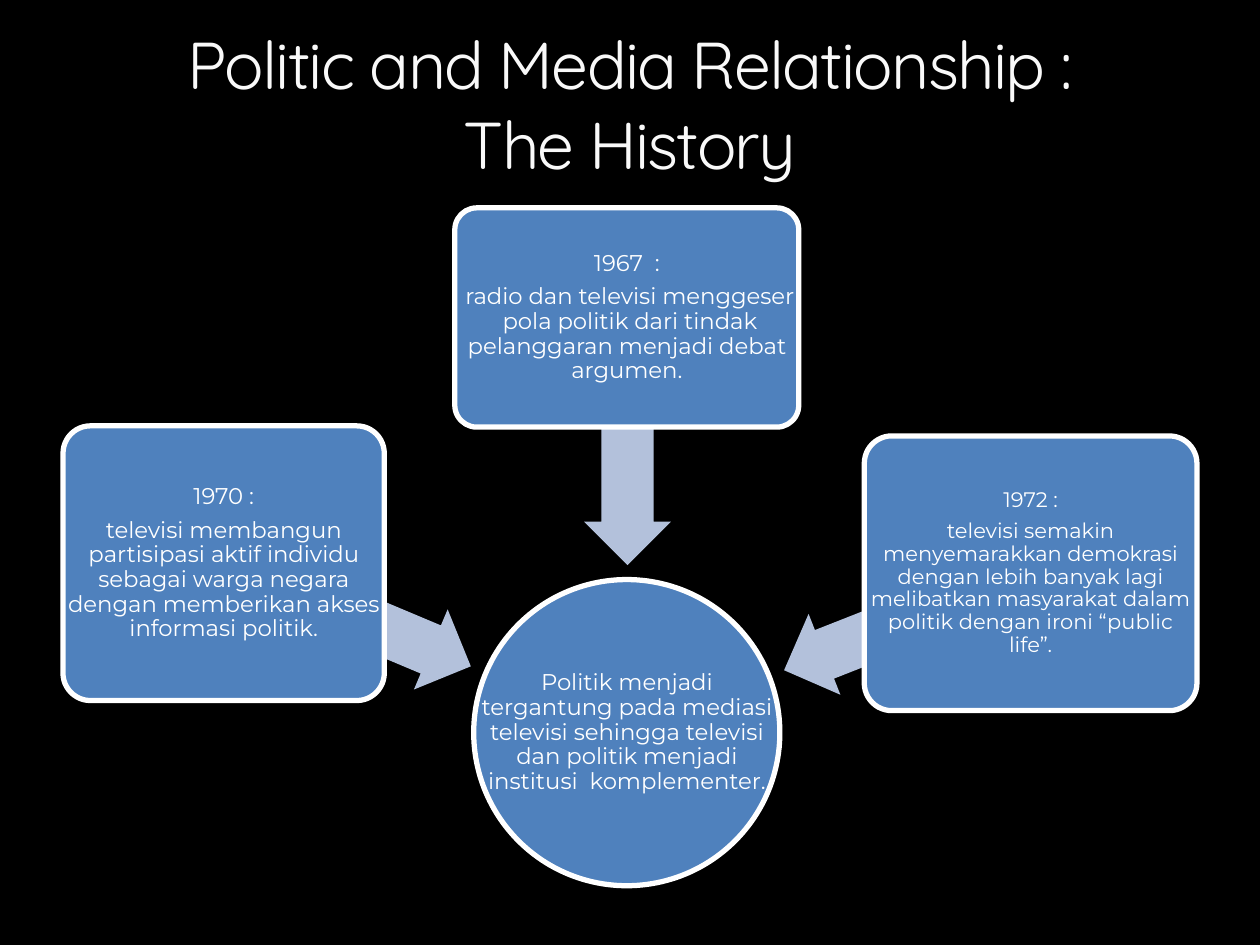
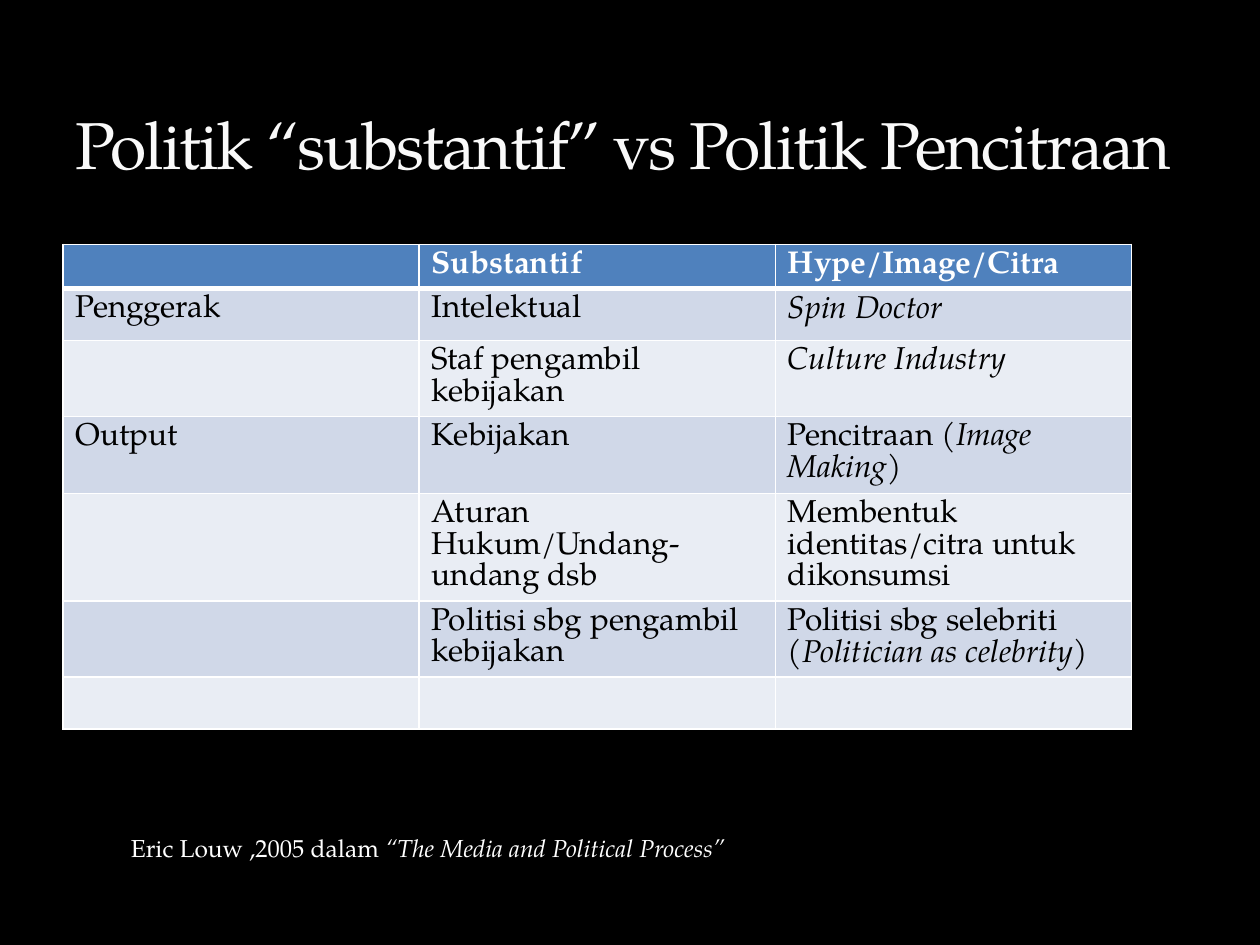
from collections import namedtuple
from copy import deepcopy

from lxml.etree import SubElement
from pptx import Presentation
from pptx.dml.color import RGBColor
from pptx.enum.shapes import MSO_SHAPE
from pptx.enum.text import MSO_ANCHOR, MSO_AUTO_SIZE, PP_ALIGN
from pptx.oxml.ns import qn
from pptx.util import Inches, Pt

SLIDE_WIDTH, SLIDE_HEIGHT = Inches(10), Inches(7.5)
COLUMN, ROW = SLIDE_WIDTH / 100, SLIDE_HEIGHT / 75
TITLE_ONLY = 5

BLACK, WHITE, TITLE_WHITE = "000000", "FFFFFF", "F9F9F9"
BLUE, ARROW_BLUE, OUTLINE_BLUE = "4F81BD", "B3C1DB", "1B406E"
BANDS = ["D0D8E8", "E9EDF4"]
SANS, ROUNDED, SERIF = "Montserrat", "Quicksand", "TeX Gyre Pagella"

Box = namedtuple("Box", "left top width height")
TITLE_BOX = Box(5, 1.7, 90, 13.3)
DIAGRAM_BOX = Box(5, 16.5, 90, 53.8)
TABLE_BOX = Box(5, 19.4, 84.8, 38.2)
SOURCE_BOX = Box(9.4, 65.6, 84.4, 3.4)

OUTCOME = (
    Box(32.6, 29.5, 24.3, 24.3),
    "Politik menjadi tergantung pada mediasi televisi sehingga televisi "
    "dan politik menjadi institusi  komplementer.",
)
EVENTS = [
    (Box(0, 17.3, 25.5, 21.8), Box(11.9, 28.8, 21.3, 6.9), 202.8, 13,
     ["1970 :",
      "televisi membangun partisipasi aktif individu sebagai warga negara "
      "dengan memberikan akses informasi politik."]),
    (Box(31.1, 0, 27.3, 17.4), Box(35, 15.1, 19.6, 6.9), 270, 13,
     ["1967  :",
      " radio dan televisi menggeser  pola politik dari tindak "
      "pelanggaran menjadi debat argumen."]),
    (Box(63.6, 18.1, 26.4, 21.8), Box(56.5, 29.4, 21, 6.9), 338.5, 12,
     ["1972 :",
      "televisi semakin menyemarakkan demokrasi dengan lebih banyak lagi "
      "melibatkan masyarakat dalam politik dengan ironi “public life”."]),
]

ROW_HEIGHTS = [3.4, 4.1, 6, 6.1, 8.5, 6, 4.1]
COMPARISON = [
    ["", "Substantif", "Hype/Image/Citra"],
    ["Penggerak", "Intelektual", "*Spin Doctor"],
    ["", "Staf pengambil kebijakan", "*Culture Industry"],
    ["Output", "Kebijakan", "Pencitraan *(Image Making)"],
    ["", "Aturan Hukum/Undang-undang dsb",
     "Membentuk identitas/citra untuk dikonsumsi"],
    ["", "Politisi sbg pengambil kebijakan",
     "Politisi sbg selebriti *(Politician as celebrity)"],
    ["", "", ""],
]


def color(value):
    return RGBColor.from_string(value)


def apply(target, values):
    for name, value in values.items():
        setattr(target, name, value)


def measure(box):
    return [int(box.left * COLUMN), int(box.top * ROW),
            int(box.width * COLUMN), int(box.height * ROW)]


def inside(parent, child):
    return child._replace(left=parent.left + child.left,
                          top=parent.top + child.top)


def paint(shape, fill, line=None):
    shape.shadow.inherit = False
    shape.fill.solid()
    shape.fill.fore_color.rgb = color(fill)
    if line:
        shape.line.color.rgb = color(line)
        shape.line.width = Pt(3)
    else:
        shape.line.fill.background()


def add_run(paragraph, text, face, size, text_color, **extra):
    run = paragraph.add_run()
    run.text = text
    apply(run.font, {"name": face, "size": Pt(size), **extra})
    run.font.color.rgb = color(text_color)
    return run


def add_marked_text(paragraph, text, size, text_color, **extra):
    for part_index, part in enumerate(text.split("*")):
        if part:
            add_run(paragraph, part, SERIF, size, text_color,
                    italic=part_index == 1, **extra)


def add_line(properties, tag, width, line_color, alpha=None):
    line = SubElement(properties, qn(tag), w=str(int(Pt(width))))
    fill = SubElement(SubElement(line, qn("a:solidFill")),
                      qn("a:srgbClr"), val=line_color)
    if alpha:
        SubElement(fill, qn("a:alpha"), val=str(alpha * 1000))
    return line


def place_title(slide, box, lines, face, alignment):
    title = slide.shapes.title
    apply(title, dict(zip(("left", "top", "width", "height"), measure(box))))
    apply(title.text_frame, {"vertical_anchor": MSO_ANCHOR.BOTTOM,
                             "auto_size": MSO_AUTO_SIZE.NONE,
                             "word_wrap": True})
    paragraph = title.text_frame.paragraphs[0]
    paragraph.alignment = alignment
    for line_index, text in enumerate(lines):
        if line_index:
            paragraph.add_line_break()
        run = add_run(paragraph, text, face, 37.8, TITLE_WHITE)
        properties = run.font._element
        properties.set("spc", "-100")
        properties.insert(0, add_line(properties, "a:ln", 0.25, OUTLINE_BLUE, 25))
    for line_break in paragraph._p.findall(qn("a:br")):
        line_break.insert(0, deepcopy(properties))


def place_label(shapes, box, texts, size, margin):
    frame = shapes.add_textbox(*measure(box)).text_frame
    sides = ("left", "top", "right", "bottom")
    apply(frame, {"word_wrap": True, "vertical_anchor": MSO_ANCHOR.MIDDLE,
                  **{f"margin_{side}": Inches(margin) for side in sides}})
    for text_index, text in enumerate(texts):
        paragraph = frame.add_paragraph() if text_index else frame.paragraphs[0]
        apply(paragraph, {"alignment": PP_ALIGN.CENTER, "line_spacing": 0.9,
                          "space_after": Pt(size * 0.4)})
        add_run(paragraph, text, SANS, size, WHITE)


def place_diagram(slide, box):
    shapes = slide.shapes.add_group_shape().shapes
    circle_box, outcome = OUTCOME
    circle_box = inside(box, circle_box)
    paint(shapes.add_shape(MSO_SHAPE.OVAL, *measure(circle_box)), BLUE, WHITE)
    place_label(shapes, circle_box, [outcome], 13, 0.01)
    for event_box, arrow_box, rotation, size, texts in EVENTS:
        arrow = shapes.add_shape(MSO_SHAPE.LEFT_ARROW,
                                 *measure(inside(box, arrow_box)))
        arrow.rotation = rotation
        arrow.adjustments[0], arrow.adjustments[1] = 0.6, 0.5
        paint(arrow, ARROW_BLUE)
        event_box = inside(box, event_box)
        card = shapes.add_shape(MSO_SHAPE.ROUNDED_RECTANGLE, *measure(event_box))
        card.adjustments[0] = 0.1
        paint(card, BLUE, WHITE)
        place_label(shapes, event_box, texts, size, 0.03)


def fill_cell(cell, text, row_index):
    header = row_index == 0
    paragraph = cell.text_frame.paragraphs[0]
    if text:
        add_marked_text(paragraph, text, 18, WHITE if header else BLACK,
                        bold=header)
    else:
        ending = SubElement(paragraph._p, qn("a:endParaRPr"), sz="1800")
        SubElement(ending, qn("a:latin"), typeface=SERIF)
    properties = cell._tc.get_or_add_tcPr()
    for side in "LRTB":
        thick = (header and side == "B") or (row_index == 1 and side == "T")
        add_line(properties, f"a:ln{side}", 3 if thick else 1, WHITE)
    cell.fill.solid()
    cell.fill.fore_color.rgb = color(BLUE if header else BANDS[(row_index - 1) % 2])


def place_table(slide, box):
    table = slide.shapes.add_table(len(COMPARISON), len(COMPARISON[0]),
                                   *measure(box)).table
    for row_index, texts in enumerate(COMPARISON):
        table.rows[row_index].height = int(ROW_HEIGHTS[row_index] * ROW)
        for column_index, text in enumerate(texts):
            fill_cell(table.cell(row_index, column_index), text, row_index)


def place_source(slide, box):
    frame = slide.shapes.add_textbox(*measure(box)).text_frame
    apply(frame, {"word_wrap": True, "auto_size": MSO_AUTO_SIZE.SHAPE_TO_FIT_TEXT})
    add_marked_text(frame.paragraphs[0],
                    "Eric Louw ,2005 dalam *“The Media and Political Process”",
                    14, WHITE)


def build_history(presentation):
    slide = presentation.slides.add_slide(presentation.slide_layouts[TITLE_ONLY])
    place_diagram(slide, DIAGRAM_BOX)
    place_title(slide, TITLE_BOX,
                ["Politic and Media Relationship :", "The History"],
                ROUNDED, PP_ALIGN.CENTER)


def build_comparison(presentation):
    slide = presentation.slides.add_slide(presentation.slide_layouts[TITLE_ONLY])
    place_table(slide, TABLE_BOX)
    place_title(slide, TITLE_BOX, ["Politik “substantif” vs Politik Pencitraan"],
                SERIF, PP_ALIGN.LEFT)
    place_source(slide, SOURCE_BOX)


def main():
    presentation = Presentation()
    apply(presentation, {"slide_width": SLIDE_WIDTH, "slide_height": SLIDE_HEIGHT})
    background = presentation.slide_master.background.fill
    background.solid()
    background.fore_color.rgb = color(BLACK)
    build_history(presentation)
    build_comparison(presentation)
    presentation.save("out.pptx")


if __name__ == "__main__":
    main()
